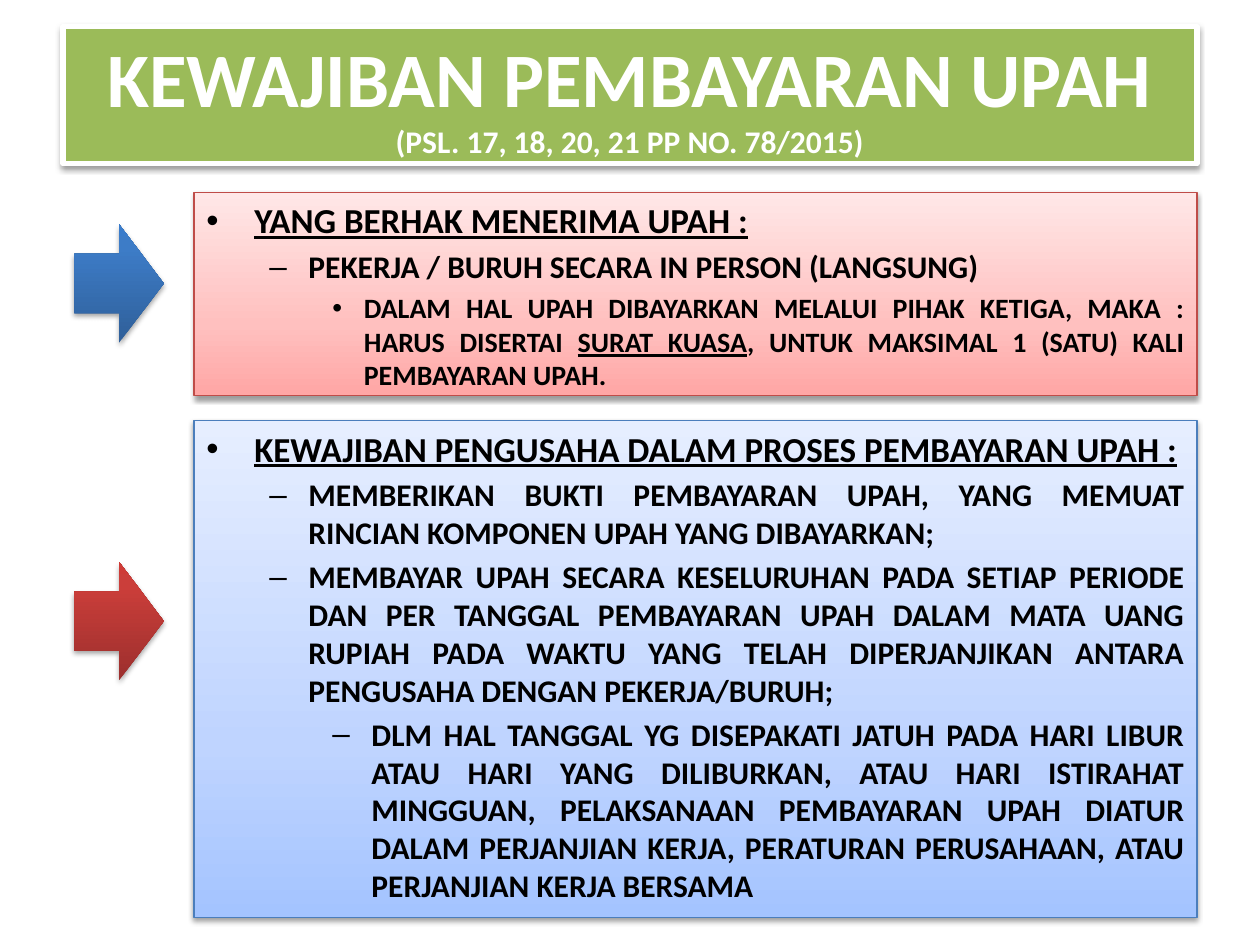
from lxml import etree
from pptx import Presentation
from pptx.dml.color import RGBColor
from pptx.enum.shapes import MSO_SHAPE as Shape
from pptx.enum.text import MSO_ANCHOR as Anchor, MSO_AUTO_SIZE as AutoSize, PP_ALIGN as Align
from pptx.oxml.ns import qn
from pptx.util import Inches, Pt

THEME = {
    "font": "Calibri", "white": "FFFFFF", "black": "000000", "title_fill": "9BBB59",
    "title": 44, "subtitle": 18, "heading": 20, "item": 18, "note": 16,
    "red_box": [(0, "FFA6A5"), (35, "FFC0BF"), (100, "FFE7E7")], "red_line": "BF4C48",
    "blue_box": [(0, "A4C4FF"), (35, "BFD4FF"), (100, "E6EEFF")], "blue_line": "4B7EBC",
    "blue_arrow": [(0, "2F5F99"), (80, "3D7CC7"), (100, "3A7CCB")],
    "red_arrow": [(0, "9C2F2D"), (80, "CB3E3A"), (100, "CE3B37")],
}
# Kinds of paragraph: level, left margin, hanging indent, bullet, type size
STYLES = {
    "heading": (0, 0.38, 0.38, "•", THEME["heading"]),
    "item": (1, 0.81, 0.31, "–", THEME["item"]),
    "note": (2, 1.25, 0.25, "•", THEME["note"]),
    "subitem": (2, 1.31, 0.31, "–", THEME["item"]),
}
# Columns and rows: start and extent in inches
TITLE_COLUMN, ARROW_COLUMN, BOX_COLUMN = (0.5, 9), (0.59, 0.71), (1.54, 7.96)
TITLE_ROW = (0.21, 1.09)
ARROW_HEIGHT = 0.94

# Each section: box row, box fill and line, arrow top and fill, paragraphs of (text, underlined) runs
SECTIONS = [
    ((1.53, 1.61), "red_box", "red_line", 1.78, "blue_arrow", [
        ("heading", [("YANG BERHAK MENERIMA UPAH :", True)]),
        ("item", [("PEKERJA / BURUH SECARA IN PERSON (LANGSUNG)", False)]),
        ("note", [("DALAM HAL UPAH DIBAYARKAN MELALUI PIHAK KETIGA, MAKA : HARUS DISERTAI ", False),
                  ("SURAT KUASA", True),
                  (", UNTUK MAKSIMAL 1 (SATU) KALI PEMBAYARAN UPAH.", False)]),
    ]),
    ((3.34, 3.94), "blue_box", "blue_line", 4.46, "red_arrow", [
        ("heading", [("KEWAJIBAN PENGUSAHA DALAM PROSES PEMBAYARAN UPAH :", True)]),
        ("item", [("MEMBERIKAN BUKTI PEMBAYARAN UPAH, YANG MEMUAT RINCIAN KOMPONEN UPAH "
                   "YANG DIBAYARKAN;", False)]),
        ("item", [("MEMBAYAR UPAH SECARA KESELURUHAN PADA SETIAP PERIODE DAN PER TANGGAL "
                   "PEMBAYARAN UPAH DALAM MATA UANG RUPIAH PADA WAKTU YANG TELAH DIPERJANJIKAN "
                   "ANTARA PENGUSAHA DENGAN PEKERJA/BURUH;", False)]),
        ("subitem", [("DLM HAL TANGGAL YG DISEPAKATI JATUH PADA HARI LIBUR ATAU HARI YANG "
                      "DILIBURKAN, ATAU HARI ISTIRAHAT MINGGUAN, PELAKSANAAN PEMBAYARAN UPAH "
                      "DIATUR DALAM PERJANJIAN KERJA, PERATURAN PERUSAHAAN, ATAU PERJANJIAN "
                      "KERJA BERSAMA", False)]),
    ]),
]


def paint(shape, fill, line=None, width=0.75, distance=1.6, opacity=38):
    """Fill with one colour or upward gradient stops; add outline and soft shadow."""
    properties = shape._element.spPr
    if isinstance(fill, str):
        shape.fill.solid()
        shape.fill.fore_color.rgb = RGBColor.from_string(fill)
    else:
        shape.fill.gradient()
        shape.fill.gradient_angle = 90
        stops = properties.find(qn("a:gradFill")).find(qn("a:gsLst"))
        for stop in list(stops):
            stops.remove(stop)
        for position, color in fill:
            stop = etree.SubElement(stops, qn("a:gs"), pos=str(position * 1000))
            etree.SubElement(stop, qn("a:srgbClr"), val=color)
    if line:
        shape.line.color.rgb = RGBColor.from_string(line)
        shape.line.width = Pt(width)
    else:
        shape.line.fill.background()
    shape.shadow.inherit = False
    shadow = etree.SubElement(properties.find(qn("a:effectLst")), qn("a:outerShdw"),
                              blurRad=str(Pt(3.1)), dist=str(Pt(distance)),
                              dir="5400000", rotWithShape="0")
    color = etree.SubElement(shadow, qn("a:srgbClr"), val=THEME["black"])
    etree.SubElement(color, qn("a:alpha"), val=str(opacity * 1000))


def write(paragraph, text, size, color, underline=False):
    run = paragraph.add_run()
    run.text = text
    formats = {"name": THEME["font"], "size": Pt(size), "bold": True, "underline": underline}
    for name, value in formats.items():
        setattr(run.font, name, value)
    run.font.color.rgb = RGBColor.from_string(color)


presentation = Presentation()
presentation.slide_width, presentation.slide_height = Inches(10), Inches(7.5)
slide = presentation.slides.add_slide(presentation.slide_layouts[5])

# Title banner
title = slide.shapes.title
frame = {"left": TITLE_COLUMN[0], "top": TITLE_ROW[0],
         "width": TITLE_COLUMN[1], "height": TITLE_ROW[1]}
for name, value in frame.items():
    setattr(title, name, Inches(value))
paint(title, THEME["title_fill"], THEME["white"], width=3)
title.text_frame.auto_size = AutoSize.NONE
title.text_frame.vertical_anchor = Anchor.MIDDLE
paragraph = title.text_frame.paragraphs[0]
paragraph.alignment = Align.CENTER
write(paragraph, "KEWAJIBAN PEMBAYARAN UPAH", THEME["title"], THEME["white"])
paragraph.add_line_break()
write(paragraph, "(PSL. 17, 18, 20, 21 PP NO. 78/2015)", THEME["subtitle"], THEME["white"])

for (top, height), box_fill, box_line, arrow_top, arrow_fill, paragraphs in SECTIONS:
    # Text box of the section
    left, width = BOX_COLUMN
    box = slide.shapes.add_shape(Shape.RECTANGLE, Inches(left), Inches(top),
                                 Inches(width), Inches(height))
    paint(box, THEME[box_fill], THEME[box_line])
    box.text_frame.word_wrap = True
    box.text_frame.vertical_anchor = Anchor.TOP
    for index, (style, runs) in enumerate(paragraphs):
        level, margin, hanging, bullet, size = STYLES[style]
        paragraph = box.text_frame.add_paragraph() if index else box.text_frame.paragraphs[0]
        formats = {"level": level, "alignment": Align.JUSTIFY, "space_before": Pt(0.2 * size)}
        for name, value in formats.items():
            setattr(paragraph, name, value)
        settings = paragraph._p.get_or_add_pPr()
        settings.set("marL", str(Inches(margin)))
        settings.set("indent", str(-Inches(hanging)))
        etree.SubElement(settings, qn("a:buFont"), typeface="Arial")
        etree.SubElement(settings, qn("a:buChar"), char=bullet)
        for text, underline in runs:
            write(paragraph, text, size, THEME["black"], underline)

    # Arrow pointing at the section
    left, width = ARROW_COLUMN
    arrow = slide.shapes.add_shape(Shape.RIGHT_ARROW, Inches(left), Inches(arrow_top),
                                   Inches(width), Inches(ARROW_HEIGHT))
    paint(arrow, THEME[arrow_fill], distance=1.8, opacity=35)

presentation.save("out.pptx")
